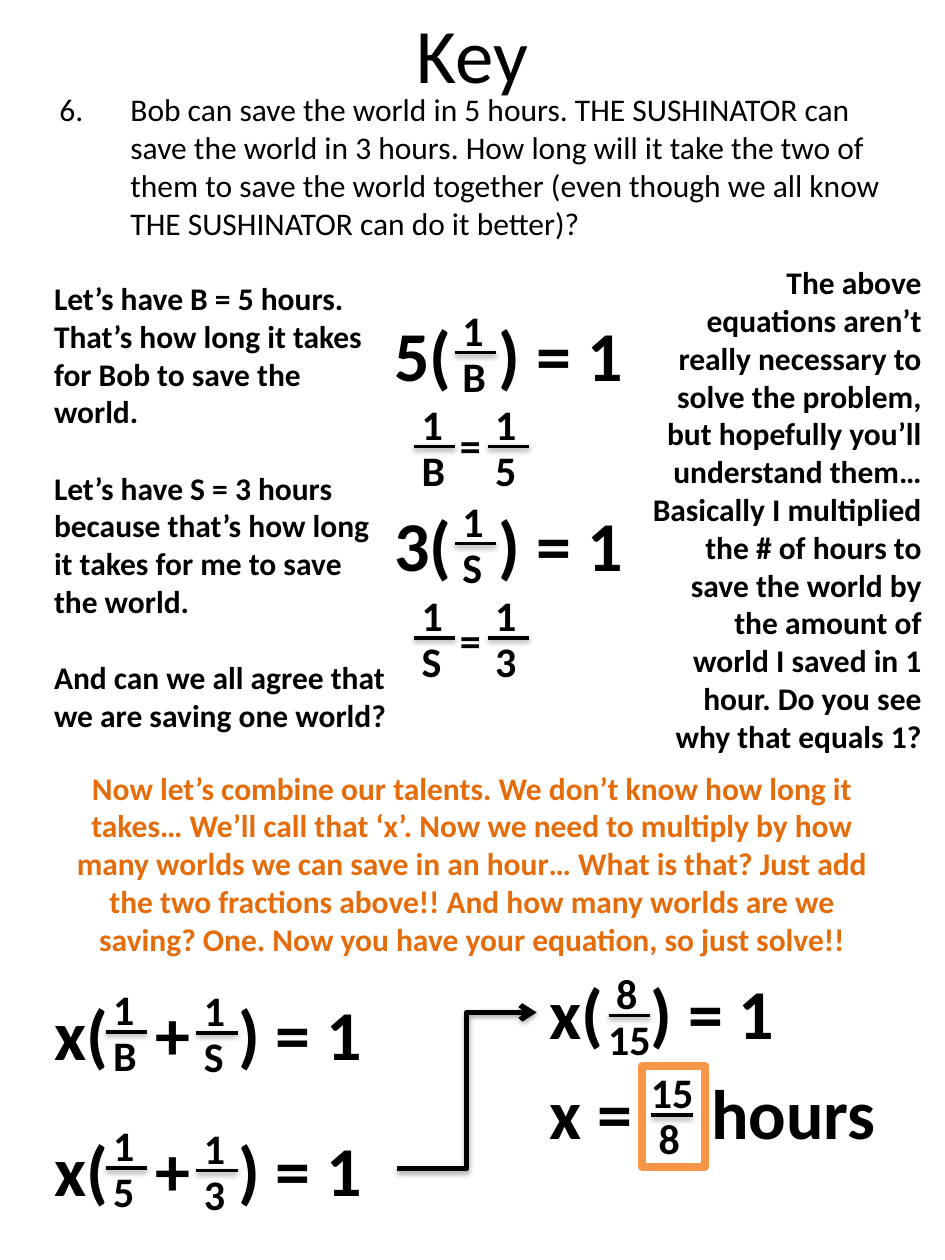
"""Build the answer key slide for the shared-work problem."""
import pptx
import pptx.dml.color
import pptx.enum.shapes
import pptx.enum.text
import pptx.oxml.ns
import pptx.util
from lxml import etree

Cm, Pt = pptx.util.Cm, pptx.util.Pt
ALIGN = pptx.enum.text.PP_ALIGN
CONNECTOR = pptx.enum.shapes.MSO_CONNECTOR
qn = pptx.oxml.ns.qn

THEME = {
    "font": "Calibri",
    "ink": "000000", "accent": "E46C0A", "frame": "F79646",
    "title": 44, "body": 18, "equation": 40, "fraction": 24,
    "bar": 2, "arrow": 3, "frame_line": 4.5,
}

TITLE = "Key"
PROBLEM_NUMBER = 6
PROBLEM = ("Bob can save the world in 5 hours. THE SUSHINATOR can save the world in 3 hours. "
           "How long will it take the two of them to save the world together "
           "(even though we all know THE SUSHINATOR can do it better)?")
SETUP = [
    "Let’s have B = 5 hours. That’s how long it takes for Bob to save the world.",
    "Let’s have S = 3 hours because that’s how long it takes for me to save the world.",
    "And can we all agree that we are saving one world?",
]
ASIDE = ("The above equations aren’t really necessary to solve the problem, but hopefully you’ll "
         "understand them… Basically I multiplied the # of hours to save the world by the amount "
         "of world I saved in 1 hour. Do you see why that equals 1?")
COMBINE = ("Now let’s combine our talents. We don’t know how long it takes… We’ll call that ‘x’. "
           "Now we need to multiply by how many worlds we can save in an hour… What is that? "
           "Just add the two fractions above!! And how many worlds are we saving? One. "
           "Now you have your equation, so just solve!!")

EQUATIONS = {
    "bob": ("5(\t) = 1", 7.7, 6.15, 6.35, [2.11]),
    "sushinator": ("3(\t) = 1", 7.7, 9.98, 6.35, [2.11]),
    "letters": ("x(\t+\t) = 1", 0.84, 19.84, 7.16, [2.05, 3.71]),
    "numbers": ("x(\t+\t) = 1", 0.84, 22.58, 7.16, [2.05, 3.71]),
    "sum": ("x(\t) = 1", 10.82, 19.43, 7.16, [2.05]),
    "answer": ("x =\thours", 10.82, 21.44, 7.16, [3.27]),
}
EQUALS_SIGNS = [(9.02, 8.33), (9.02, 12.27)]

FRACTIONS = [
    ("1", "B", 9.17, 7.11), ("1", "S", 9.17, 10.96),
    ("1", "B", 8.35, 9.0), ("1", "5", 9.83, 9.0),
    ("1", "S", 8.35, 12.86), ("1", "3", 9.83, 12.86),
    ("1", "B", 2.13, 20.8), ("1", "S", 3.96, 20.82),
    ("1", "5", 2.13, 23.55), ("1", "3", 3.96, 23.6),
    ("8", "15", 12.27, 20.47), ("15", "8", 13.13, 22.48),
]
BAR_LENGTH, TERM_WIDTH, TERM_HEIGHT = 0.83, 2.74, 1.27
NUMERATOR_RISE, DENOMINATOR_RISE = 1.1, 0.17
TERM_SHIFT = {1: -0.1, 2: -0.26}
ANSWER_FRAME = (12.95, 21.49, 1.27, 2.03)


def rgb(name):
    return pptx.dml.color.RGBColor.from_string(THEME[name])


def write(frame, paragraphs, size="body", color="ink", bold=True,
          align=ALIGN.LEFT, gap=0, tabs=()):
    frame.word_wrap = True
    for index, words in enumerate(paragraphs):
        paragraph = frame.add_paragraph() if index else frame.paragraphs[0]
        paragraph.alignment = align
        paragraph.space_before = Pt(gap if index else 0)
        run = paragraph.add_run()
        run.text = words
        run.font.name, run.font.size = THEME["font"], Pt(THEME[size])
        run.font.bold, run.font.color.rgb = bold, rgb(color)
        if tabs:
            stops = etree.SubElement(paragraph._p.get_or_add_pPr(), qn("a:tabLst"))
            for stop in tabs:
                etree.SubElement(stops, qn("a:tab"), pos=str(Cm(stop)), algn="l")


def add_text(shapes, paragraphs, left, top, width, height, **style):
    box = shapes.add_textbox(Cm(left), Cm(top), Cm(width), Cm(height))
    write(box.text_frame, paragraphs, **style)
    return box


def add_fraction(slide, numerator, denominator, left, bar_top):
    fraction = slide.shapes.add_group_shape().shapes
    for term, rise in ((numerator, NUMERATOR_RISE), (denominator, DENOMINATOR_RISE)):
        add_text(fraction, [term], left + TERM_SHIFT[len(term)], bar_top - rise,
                 TERM_WIDTH, TERM_HEIGHT, size="fraction")
    bar = fraction.add_connector(CONNECTOR.STRAIGHT, Cm(left), Cm(bar_top),
                                 Cm(left + BAR_LENGTH), Cm(bar_top))
    bar.line.color.rgb, bar.line.width = rgb("ink"), Pt(THEME["bar"])


def add_arrow(slide, start, finish):
    arrow = slide.shapes.add_connector(
        CONNECTOR.ELBOW, start.left + start.width, start.top + start.height // 2,
        finish.left, finish.top + finish.height // 2)
    arrow.begin_connect(start, 3)
    arrow.end_connect(finish, 1)
    arrow.line.color.rgb, arrow.line.width = rgb("ink"), Pt(THEME["arrow"])
    etree.SubElement(arrow.line._get_or_add_ln(), qn("a:tailEnd"), type="arrow")
    arrow._element.find(".//" + qn("a:effectRef")).set("idx", "2")


def number_problem(box):
    properties = box.text_frame.paragraphs[0]._p.get_or_add_pPr()
    properties.set("marL", str(Cm(1.43)))
    properties.set("indent", str(Cm(-1.43)))
    etree.SubElement(properties, qn("a:buFont"), typeface="+mj-lt")
    etree.SubElement(properties, qn("a:buAutoNum"), type="arabicPeriod",
                     startAt=str(PROBLEM_NUMBER))


def main():
    deck = pptx.Presentation()
    deck.slide_width, deck.slide_height = Cm(19.05), Cm(25.4)
    slide = deck.slides.add_slide(deck.slide_layouts[5])
    shapes = slide.shapes

    title = shapes.title
    title.left, title.top, title.width, title.height = Cm(0.95), Cm(-1.06), Cm(17.15), Cm(4.23)
    title.text_frame.vertical_anchor = pptx.enum.text.MSO_ANCHOR.MIDDLE
    write(title.text_frame, [TITLE], size="title", bold=False, align=ALIGN.CENTER)

    number_problem(add_text(shapes, [PROBLEM], 0.95, 1.7, 17.15, 3.5, bold=False))
    add_text(shapes, SETUP, 0.84, 5.5, 7.2, 9.5, gap=22)
    add_text(shapes, [ASIDE], 12.9, 5.18, 5.93, 10.26, align=ALIGN.RIGHT)
    add_text(shapes, [COMBINE], 1.02, 15.37, 17.0, 4.11, color="accent", align=ALIGN.CENTER)

    equations = {
        step: add_text(shapes, [words], left, top, width, 1.96, size="equation", tabs=tabs)
        for step, (words, left, top, width, tabs) in EQUATIONS.items()
    }
    for left, top in EQUALS_SIGNS:
        add_text(shapes, ["="], left, top, 2.34, TERM_HEIGHT, size="fraction")
    for fraction in FRACTIONS:
        add_fraction(slide, *fraction)
    add_arrow(slide, equations["numbers"], equations["sum"])

    frame = shapes.add_shape(pptx.enum.shapes.MSO_SHAPE.RECTANGLE, *map(Cm, ANSWER_FRAME))
    frame.shadow.inherit = False
    frame.fill.background()
    frame.line.color.rgb, frame.line.width = rgb("frame"), Pt(THEME["frame_line"])
    deck.save("out.pptx")


if __name__ == "__main__":
    main()
